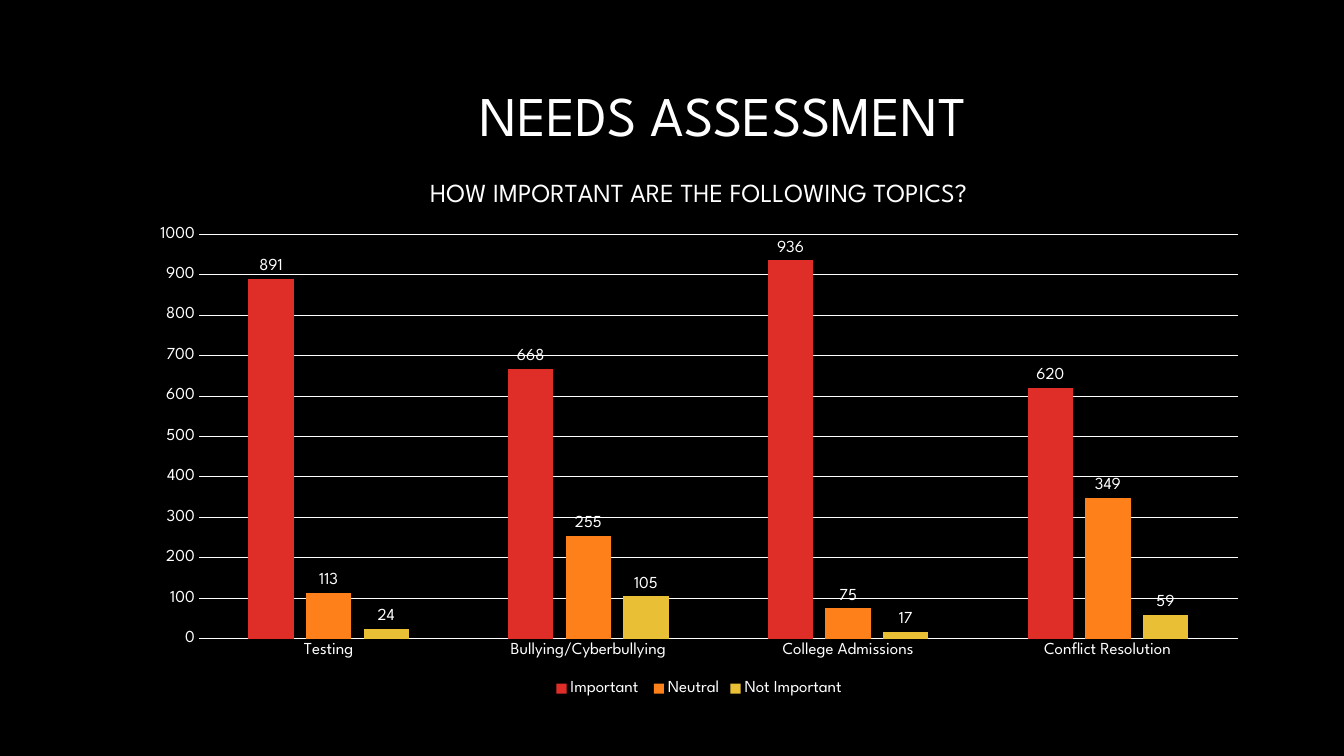
"""Build the needs assessment slide with its clustered column chart."""
from pptx import Presentation
from pptx.chart.data import CategoryChartData
from pptx.dml.color import RGBColor
from pptx.enum.chart import XL_CHART_TYPE, XL_LABEL_POSITION, XL_LEGEND_POSITION, XL_TICK_MARK
from pptx.enum.text import MSO_ANCHOR, MSO_AUTO_SIZE, PP_ALIGN
from pptx.oxml import parse_xml
from pptx.oxml.ns import nsdecls
from pptx.util import Inches, Pt

COLORS = {
    "background": "000000",
    "text": "FFFFFF",
    "Important ": "DF2E28",
    "Neutral": "FE801A",
    "Not Important": "E9BF35",
}
TOPICS = ["Testing", "Bullying/Cyberbullying", "College Admissions", "Conflict Resolution"]
ANSWERS = {
    "Important ": [891, 668, 936, 620],
    "Neutral": [113, 255, 75, 349],
    "Not Important": [24, 105, 17, 59],
}
PLOT_AREA = {"x": 0.054, "y": 0.139, "w": 0.926, "h": 0.747}


def rgb(name):
    return RGBColor.from_string(COLORS[name])


def style(font, size):
    font.name = "League Spartan"
    font.size = Pt(size)
    font.bold = False
    font.color.rgb = rgb("text")


deck = Presentation()
deck.slide_width, deck.slide_height = Inches(13.33), Inches(7.5)
slide = deck.slides.add_slide(deck.slide_layouts[5])
slide.background.fill.solid()
slide.background.fill.fore_color.rgb = rgb("background")

heading = slide.shapes.title
heading.left, heading.top = Inches(2.46), Inches(0.47)
heading.width, heading.height = Inches(9.42), Inches(1.41)
heading.text_frame.text = "NEEDS ASSESSMENT"
heading.text_frame.auto_size = MSO_AUTO_SIZE.NONE
heading.text_frame.vertical_anchor = MSO_ANCHOR.MIDDLE
heading_line = heading.text_frame.paragraphs[0]
heading_line.alignment = PP_ALIGN.CENTER
heading_line.line_spacing = 0.9
style(heading_line.font, 40)

survey = CategoryChartData()
survey.categories = TOPICS
for answer, votes in ANSWERS.items():
    survey.add_series(answer, votes)
chart = slide.shapes.add_chart(
    XL_CHART_TYPE.COLUMN_CLUSTERED,
    Inches(1.37), Inches(1.58), Inches(11.13), Inches(5.37), survey,
).chart
style(chart.font, 12)

chart.has_title = True
question = chart.chart_title.text_frame
question.text = "HOW IMPORTANT ARE THE FOLLOWING TOPICS?"
style(question.paragraphs[0].font, 18.6)
chart.chart_title.include_in_layout = False

chart.has_legend = True
chart.legend.position = XL_LEGEND_POSITION.BOTTOM
chart.legend.include_in_layout = False
style(chart.legend.font, 12)

topic_axis, vote_axis = chart.category_axis, chart.value_axis
for axis in (topic_axis, vote_axis):
    axis.major_tick_mark = axis.minor_tick_mark = XL_TICK_MARK.NONE
    style(axis.tick_labels.font, 12)
vote_axis.minimum_scale, vote_axis.maximum_scale, vote_axis.major_unit = 0, 1000, 100
vote_axis.has_major_gridlines = True
vote_axis.format.line.fill.background()
for line in (topic_axis.format.line, vote_axis.major_gridlines.format.line):
    line.color.rgb = rgb("text")
    line.width = Pt(0.75)

columns = chart.plots[0]
columns.gap_width, columns.overlap = 219, -27
columns.vary_by_categories = False
for series in columns.series:
    series.format.fill.solid()
    series.format.fill.fore_color.rgb = rgb(series.name)
    labels = series.data_labels
    labels.show_value = True
    labels.position = XL_LABEL_POSITION.OUTSIDE_END
    style(labels.font, 12)

plot_area = chart.element.chart.plotArea
for automatic in plot_area.xpath("./c:layout"):
    plot_area.remove(automatic)
modes = '<c:layoutTarget val="inner"/><c:xMode val="edge"/><c:yMode val="edge"/>'
shares = "".join(f'<c:{side} val="{share}"/>' for side, share in PLOT_AREA.items())
plot_area.insert(0, parse_xml(
    f'<c:layout {nsdecls("c")}><c:manualLayout>{modes}{shares}</c:manualLayout></c:layout>'
))

deck.save("out.pptx")
